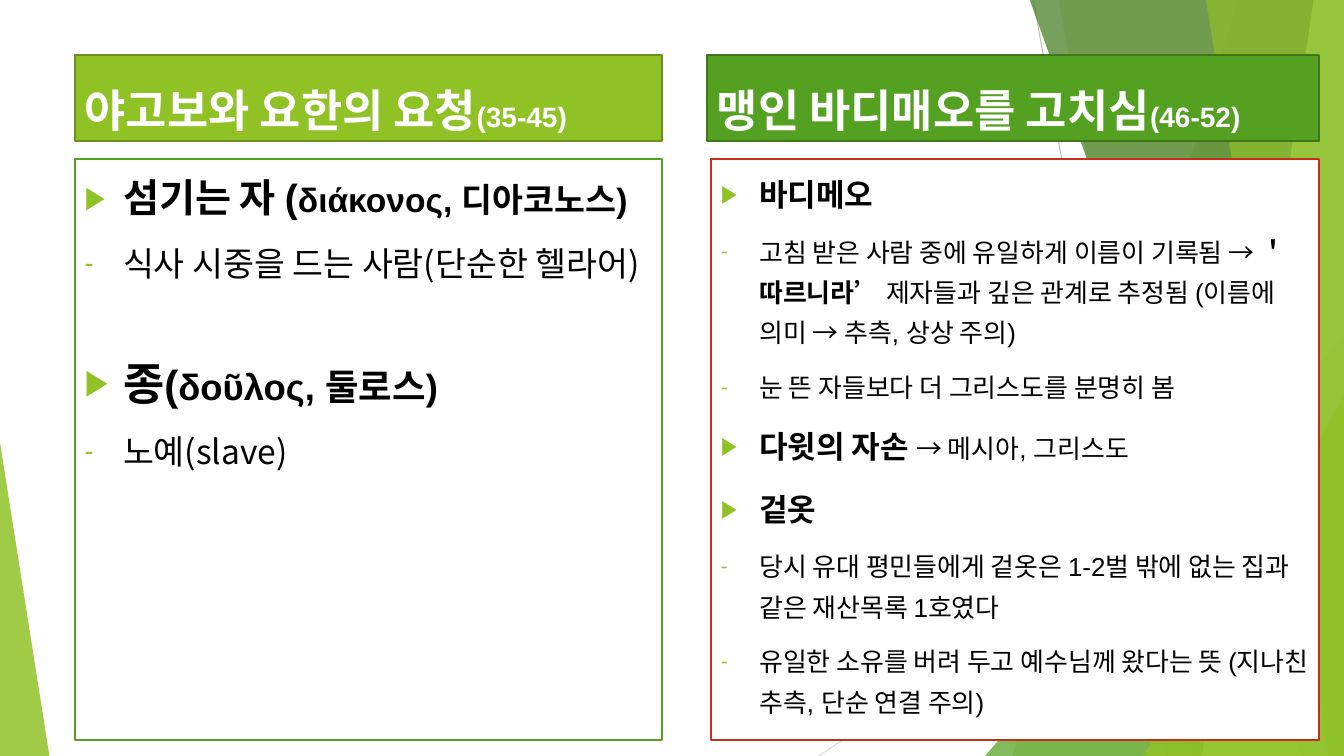
from lxml import etree
from pptx import Presentation
from pptx.dml.color import RGBColor
from pptx.enum.shapes import MSO_CONNECTOR, MSO_SHAPE
from pptx.enum.text import MSO_ANCHOR, MSO_AUTO_SIZE, PP_ALIGN
from pptx.oxml.ns import qn
from pptx.util import Inches, Pt

LINE = MSO_CONNECTOR.STRAIGHT
TRIANGLE = MSO_SHAPE.ISOSCELES_TRIANGLE
TOP, BOTTOM = MSO_ANCHOR.TOP, MSO_ANCHOR.BOTTOM
LEFT = PP_ALIGN.LEFT
NO_FIT = MSO_AUTO_SIZE.NONE

W, H = 13.33, 7.5
ARIAL, NOTO = "Arial", "Noto Sans CJK KR"
ARROW, DASH = "▶", "-"
COLORS = {
    "lime": "90C226", "lime_edge": "6B901C", "green": "54A021", "green_edge": "3E7618",
    "forest": "3F7819", "pale": "C0E474", "red": "C42F1A", "white": "FFFFFF",
    "black": "000000", "gray": "BFBFBF", "light_gray": "D9D9D9",
}

HEADINGS = [
    ((0.74, 0.55, 5.83, 0.85), "lime", "lime_edge", "야고보와 요한의 요청", "(35-45)"),
    ((7.01, 0.55, 6.07, 0.85), "green", "green_edge", "맹인 바디매오를 고치심", "(46-52)"),
]
SERVANT = [
    (ARROW, 10, [("섬기는 자 (", 28, True, ARIAL), ("διάκονος, 디아코노스)", 24, True, ARIAL)]),
    (DASH, 10, [("식사 시중을 드는 사람(단순한 헬라어)", 24, False, NOTO)]),
    (ARROW, 44, [("종", 32, True, NOTO), ("(", 30, True, ARIAL),
                 ("δοῦλος, 둘로스)", 26, True, ARIAL)]),
    (DASH, 10, [("노예(slave)", 24, False, NOTO)]),
]
BARTIMAEUS = [
    (ARROW, 10, [("바디메오", 22.2, True, ARIAL)]),
    (DASH, 10, [("고침 받은 사람 중에 유일하게 이름이 기록됨 → ", 18.5, False, ARIAL),
                ("＇따르니라’ ", 18.5, True, NOTO),
                ("제자들과 깊은 관계로 추정됨 (이름에 의미 → 추측, 상상 주의)", 18.5, False, ARIAL)]),
    (DASH, 10, [("눈 뜬 자들보다 더 그리스도를 분명히 봄", 18.5, False, ARIAL)]),
    (ARROW, 10, [("다윗의 자손 ", 22.2, True, ARIAL), ("→ 메시아, 그리스도", 18.5, False, ARIAL)]),
    (ARROW, 10, [("겉옷", 22.2, True, ARIAL)]),
    (DASH, 10, [("당시 유대 평민들에게 겉옷은 1-2벌 밖에 없는 집과 같은 재산목록 1호였다",
                 18.5, False, ARIAL)]),
    (DASH, 10, [("유일한 소유를 버려 두고 예수님께 왔다는 뜻 (지나친 추측, 단순 연결 주의)",
                 18.5, False, ARIAL)]),
]
LISTS = [
    ((0.74, 1.58, 5.83, 5.76), "green", 1.2, SERVANT),
    ((7.05, 1.58, 6.03, 5.76), "red", 1.3, BARTIMAEUS),
]


def rgb(name):
    """Return the named colour."""
    return RGBColor.from_string(COLORS[name])


def tint(sp, color, alpha):
    """Fill a facet with a translucent colour and no outline."""
    sp.shadow.inherit = False
    sp.fill.solid()
    sp.fill.fore_color.rgb = rgb(color)
    clr = sp.fill._xPr.find(qn("a:solidFill"))[0]
    etree.SubElement(clr, qn("a:alpha"), val=str(alpha * 1000))
    sp.line.fill.background()


def add_ray(shapes, start, end, color):
    """Draw one thin background line."""
    cx = shapes.add_connector(LINE, *(Inches(v) for v in start + end))
    cx.line.color.rgb = rgb(color)
    cx.line.width = Pt(0.75)
    etree.SubElement(cx._element.spPr, qn("a:effectLst"))


def add_facet(shapes, top_x, bottom_x, color, alpha):
    """Draw a full-height facet reaching the right edge."""
    fb = shapes.build_freeform(Inches(top_x), Inches(-0.01))
    corners = [(W, -0.01), (W, H), (bottom_x, H)]
    fb.add_line_segments([(Inches(x), Inches(y)) for x, y in corners])
    tint(fb.convert_to_shape(), color, alpha)


def add_corner(shapes, box, apex, color, alpha):
    """Draw a right triangle standing on the bottom edge."""
    sp = shapes.add_shape(TRIANGLE, *(Inches(v) for v in box))
    sp.adjustments[0] = apex
    tint(sp, color, alpha)


def add_backdrop(prs, s):
    """Build the faceted backdrop as a group and place it on the master."""
    group = s.shapes.add_group_shape()
    shapes = group.shapes
    add_ray(shapes, (10.25, 0), (11.58, H), "gray")
    add_ray(shapes, (W, 4.03), (8.12, H), "light_gray")
    add_facet(shapes, 12.28, 10.04, "lime", 30)
    add_facet(shapes, 10.5, 11.83, "lime", 20)
    add_corner(shapes, (9.77, 3.33, 3.56, 4.17), 1, "green", 72)
    add_facet(shapes, 10.21, 12.91, "forest", 70)
    add_facet(shapes, 13.03, 11.92, "pale", 70)
    add_facet(shapes, 11.96, 13.18, "lime", 65)
    add_corner(shapes, (11.34, 3.93, 1.99, 3.57), 1, "lime", 80)
    add_corner(shapes, (0, 4.39, 0.49, 3.11), 0, "lime", 85)
    prs.slide_master.shapes._spTree.insert(2, group._element)


def set_panel(sp, box, fill, edge, anchor):
    """Place and frame a placeholder, returning its text frame."""
    sp.left, sp.top, sp.width, sp.height = (Inches(v) for v in box)
    sp.fill.solid()
    sp.fill.fore_color.rgb = rgb(fill)
    sp.line.color.rgb = rgb(edge)
    sp.line.width = Pt(1.5)
    tf = sp.text_frame
    tf.word_wrap = True
    tf.auto_size = NO_FIT
    tf.vertical_anchor = anchor
    return tf


def add_run(p, text, size, bold, font, color):
    """Append one formatted run."""
    r = p.add_run()
    r.text = text
    r.font.size = Pt(size)
    r.font.bold = bold
    r.font.name = font
    r.font.color.rgb = rgb(color)
    etree.SubElement(r._r.get_or_add_rPr(), qn("a:ea"), typeface=NOTO)


def set_bullet(p, char):
    """Give a paragraph a hanging lime bullet."""
    pPr = p._p.get_or_add_pPr()
    pPr.set("marL", str(Inches(0.38)))
    pPr.set("indent", str(Inches(-0.38)))
    clr = etree.SubElement(pPr, qn("a:buClr"))
    etree.SubElement(clr, qn("a:srgbClr"), val=COLORS["lime"])
    etree.SubElement(pPr, qn("a:buSzPct"), val="80000")
    etree.SubElement(pPr, qn("a:buChar"), char=char)


def fill_heading(sp, box, fill, edge, title, verses):
    """Write a column heading with its verse range."""
    p = set_panel(sp, box, fill, edge, BOTTOM).paragraphs[0]
    p.alignment = LEFT
    p.space_before = Pt(10)
    add_run(p, title, 32, True, ARIAL, "white")
    add_run(p, verses, 20, True, ARIAL, "white")


def fill_list(sp, box, edge, spacing, items):
    """Write a framed bullet list."""
    tf = set_panel(sp, box, "white", edge, TOP)
    for i, (char, before, runs) in enumerate(items):
        p = tf.add_paragraph() if i else tf.paragraphs[0]
        p.alignment = LEFT
        p.line_spacing = spacing
        p.space_before = Pt(before)
        set_bullet(p, char)
        for run in runs:
            add_run(p, *run, "black")


def main():
    """Build the two-column comparison slide."""
    prs = Presentation()
    prs.slide_width, prs.slide_height = Inches(W), Inches(H)
    s = prs.slides.add_slide(prs.slide_layouts[4])
    add_backdrop(prs, s)
    title, head_l, list_l, head_r, list_r = s.placeholders
    title._element.getparent().remove(title._element)
    for sp, heading in zip((head_l, head_r), HEADINGS):
        fill_heading(sp, *heading)
    for sp, content in zip((list_l, list_r), LISTS):
        fill_list(sp, *content)
    prs.save("out.pptx")


if __name__ == "__main__":
    main()
